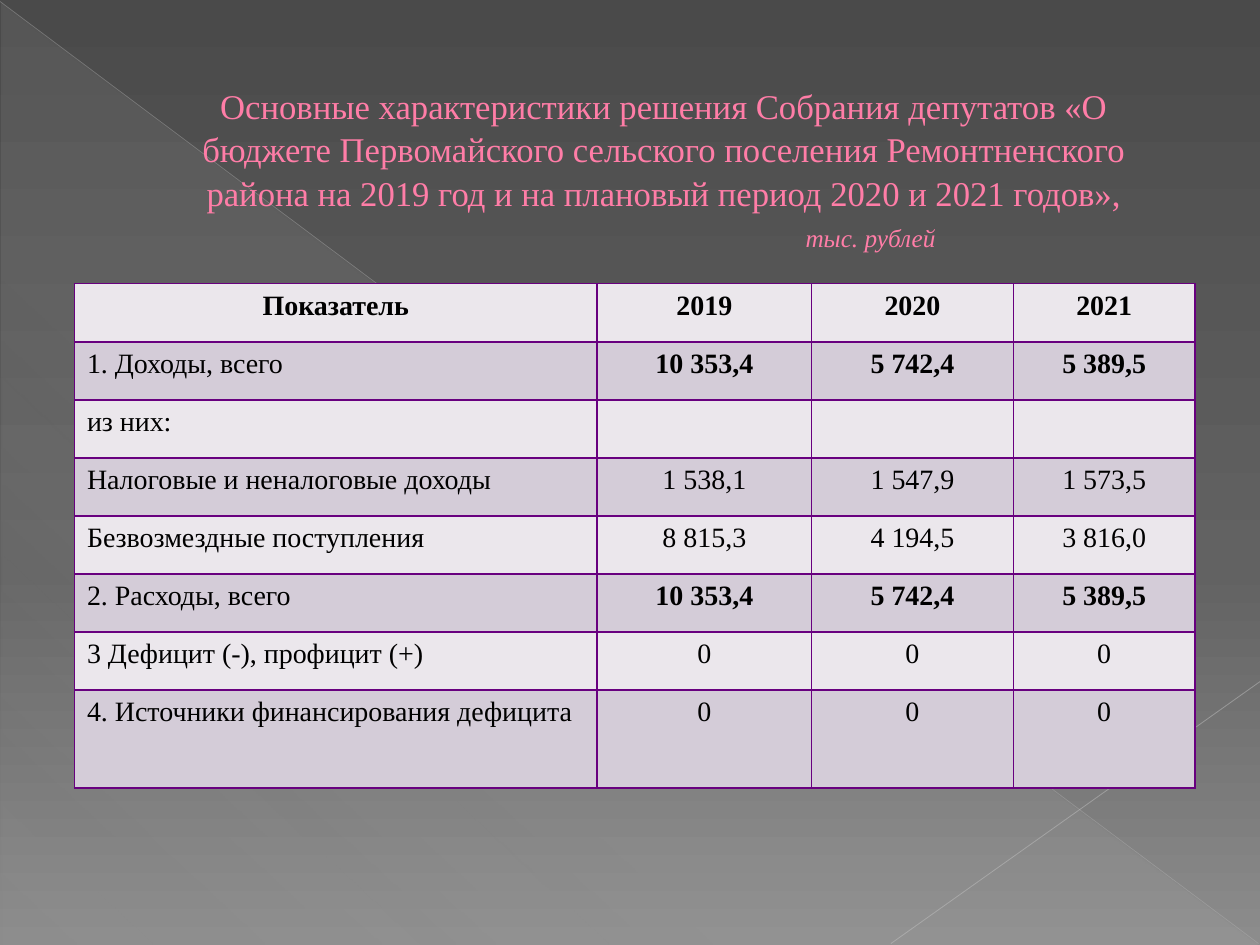
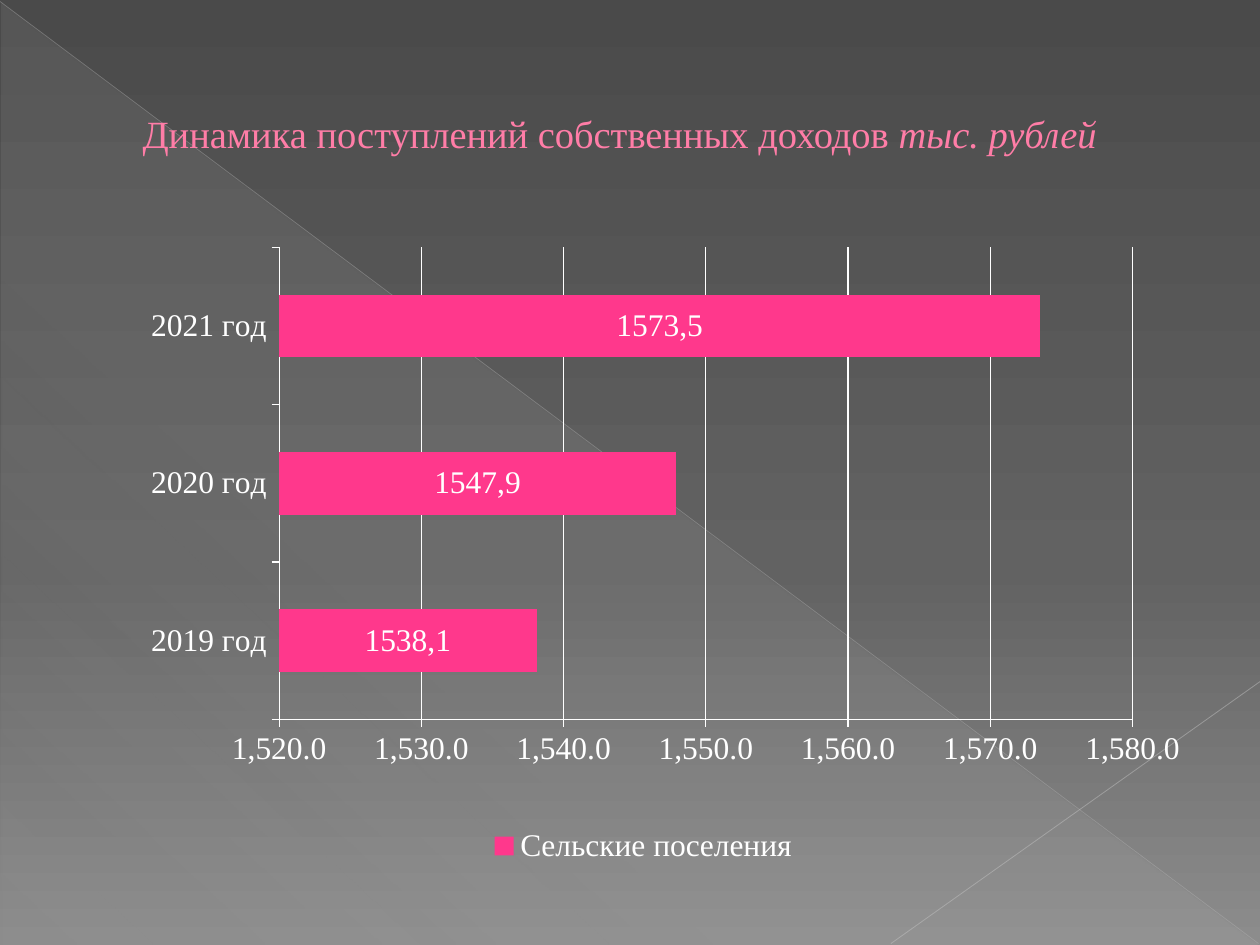
from dataclasses import dataclass

from lxml.etree import SubElement
from pptx import Presentation
from pptx.chart.data import CategoryChartData
from pptx.dml.color import RGBColor
from pptx.enum.chart import XL_CHART_TYPE, XL_LEGEND_POSITION, XL_TICK_MARK
from pptx.enum.shapes import MSO_CONNECTOR, MSO_SHAPE
from pptx.enum.text import MSO_ANCHOR, MSO_AUTO_SIZE, PP_ALIGN
from pptx.oxml.ns import qn
from pptx.util import Cm, Pt


@dataclass(frozen=True)
class Theme:
    font: str = "Times New Roman"
    chart_font: str = "TeX Gyre Adventor"
    title: str = "FF7DA7"
    title_outline: str = "B12761"
    light: str = "FFFFFF"
    ink: str = "000000"
    bar: str = "FF388C"
    border: str = "68007F"
    veil: str = "D2D2D2"
    diagonal: str = "BFBFBF"
    corner: str = "C6C6C6"
    bands: tuple = ("EBE7EC", "D4CCD8")
    backdrop: tuple = ((0, "4A4A4A", 100), (60, "626262", 100), (100, "8C8C8C", 100))
    budget_title_size: float = 19.8
    unit_size: float = 14.4
    dynamics_title_size: float = 22
    table_size: float = 16
    chart_size: float = 18


THEME = Theme()

BUDGET_ROWS = [
    ("Показатель", "2019", "2020", "2021"),
    ("1. Доходы, всего", "10 353,4", "5 742,4", "5 389,5"),
    ("из них:", "", "", ""),
    ("Налоговые и неналоговые доходы", "1 538,1", "1 547,9", "1 573,5"),
    ("Безвозмездные поступления", "8 815,3", "4 194,5", "3 816,0"),
    ("2. Расходы, всего", "10 353,4", "5 742,4", "5 389,5"),
    ("3 Дефицит (-), профицит (+)", "0", "0", "0"),
    ("4. Источники финансирования дефицита", "0", "0", "0"),
]
TOTAL_ROWS = (1, 5)
OWN_INCOME = {"2019 год": 1538.1, "2020 год": 1547.9, "2021 год": 1573.5}


def rgb(color):
    return RGBColor.from_string(color)


def style_font(font, size, color, bold=None, italic=None):
    font.name = THEME.font
    font.size = Pt(size)
    font.color.rgb = rgb(color)
    font.bold = bold
    font.italic = italic


def add_color(parent, color, opacity=100):
    tint = SubElement(parent, qn("a:srgbClr"), val=color)
    if opacity < 100:
        SubElement(tint, qn("a:alpha"), val=str(opacity * 1000))


def add_solid(parent, color, opacity=100):
    add_color(SubElement(parent, qn("a:solidFill")), color, opacity)


def paint_gradient(fill, owner, stops, angle):
    fill.gradient()
    gradient = next(owner.iter(qn("a:gradFill")))
    for child in list(gradient):
        gradient.remove(child)
    stop_list = SubElement(gradient, qn("a:gsLst"))
    for position, color, opacity in stops:
        stop = SubElement(stop_list, qn("a:gs"), pos=str(position * 1000))
        add_color(stop, color, opacity)
    SubElement(gradient, qn("a:lin"), ang=str(angle * 60000), scaled="0")


def add_ray(slide, start, end, color, width, opacity):
    ray = slide.shapes.add_connector(
        MSO_CONNECTOR.STRAIGHT, *(Cm(value) for value in start + end))
    ray.line.width = Pt(width)
    ray.line.color.rgb = rgb(color)
    tint = next(ray._element.spPr.iter(qn("a:srgbClr")))
    SubElement(tint, qn("a:alpha"), val=str(opacity * 1000))
    SubElement(ray._element.spPr, qn("a:effectLst"))


def add_backdrop(slide):
    veil = slide.shapes.add_shape(
        MSO_SHAPE.RIGHT_TRIANGLE, Cm(0.03), Cm(0.05), Cm(25.35), Cm(19))
    veil.shadow.inherit = False
    veil.line.fill.background()
    stops = [(0, THEME.veil, 10), (70, THEME.veil, 8), (100, THEME.veil, 1)]
    paint_gradient(veil.fill, veil._element, stops, 133)
    add_ray(slide, (0, 0.03), (25.37, 19.02), THEME.diagonal, 0.39, 35)
    add_ray(slide, (25.4, 13.74), (17.96, 19.02), THEME.corner, 0.47, 45)


def add_titled_slide(presentation, left, top, width, height):
    slide = presentation.slides.add_slide(presentation.slide_layouts[5])
    add_backdrop(slide)
    title = slide.shapes.title
    slide.shapes._spTree.append(title._element)
    title.left, title.top = Cm(left), Cm(top)
    title.width, title.height = Cm(width), Cm(height)
    frame = title.text_frame
    frame.word_wrap = True
    frame.auto_size = MSO_AUTO_SIZE.NONE
    frame.vertical_anchor = MSO_ANCHOR.MIDDLE
    return slide, frame


def format_paragraph(paragraph, alignment, indent):
    paragraph.alignment = alignment
    properties = paragraph._p.get_or_add_pPr()
    properties.set("marL", str(Cm(indent)))
    properties.set("indent", "0")


def add_title_run(paragraph, text, size, italic=False):
    run = paragraph.add_run()
    run.text = text
    style_font(run.font, size, THEME.title, italic=italic)
    properties = run._r.get_or_add_rPr()
    outline = SubElement(properties, qn("a:ln"), w=str(Pt(0.5)))
    add_solid(outline, THEME.title_outline)
    properties.insert(0, outline)


def set_borders(cell):
    properties = cell._tc.get_or_add_tcPr()
    for side in ("lnL", "lnR", "lnT", "lnB"):
        add_solid(SubElement(properties, qn(f"a:{side}"), w=str(Pt(1))), THEME.border)


def fill_cell(cell, text, row, column):
    set_borders(cell)
    cell.fill.solid()
    cell.fill.fore_color.rgb = rgb(THEME.bands[row % 2])
    paragraph = cell.text_frame.paragraphs[0]
    paragraph.alignment = PP_ALIGN.CENTER if row == 0 or column else PP_ALIGN.LEFT
    bold = row == 0 or (row in TOTAL_ROWS and column > 0)
    if text:
        run = paragraph.add_run()
        run.text = text
        style_font(run.font, THEME.table_size, THEME.ink, bold)


def add_budget_table(slide):
    widths = (10.54, 4.32, 4.07, 3.66)
    heights = [1.17] * 7 + [1.98]
    table = slide.shapes.add_table(
        len(heights), len(widths), Cm(1.5), Cm(5.72), Cm(sum(widths)), Cm(sum(heights))).table
    for column, width in zip(table.columns, widths):
        column.width = Cm(width)
    for row, height in zip(table.rows, heights):
        row.height = Cm(height)
    for row, texts in enumerate(BUDGET_ROWS):
        for column, text in enumerate(texts):
            fill_cell(table.cell(row, column), text, row, column)


def fill_layout(layout, x, y, w, h, inner=False):
    manual = SubElement(layout, qn("c:manualLayout"))
    settings = [("layoutTarget", "inner")] if inner else []
    settings += [("xMode", "edge"), ("yMode", "edge"), ("x", x), ("y", y), ("w", w), ("h", h)]
    for tag, value in settings:
        SubElement(manual, qn(f"c:{tag}"), val=str(value))


def place_plot(chart):
    plot_area = next(chart._chartSpace.iter(qn("c:plotArea")))
    for layout in plot_area.findall(qn("c:layout")):
        plot_area.remove(layout)
    layout = SubElement(plot_area, qn("c:layout"))
    plot_area.insert(0, layout)
    fill_layout(layout, 0.19, 0.04, 0.75, 0.71, inner=True)


def add_legend(chart):
    chart.has_legend = True
    legend = chart.legend
    legend.position = XL_LEGEND_POSITION.RIGHT
    legend.include_in_layout = False
    style_font(legend.font, THEME.chart_size, THEME.light)
    element = legend._element
    for layout in element.findall(qn("c:layout")):
        element.remove(layout)
    layout = SubElement(element, qn("c:layout"))
    element.find(qn("c:legendPos")).addnext(layout)
    fill_layout(layout, 0.37, 0.9, 0.28, 0.08)


def style_axis(axis):
    axis.major_tick_mark = XL_TICK_MARK.OUTSIDE
    axis.minor_tick_mark = XL_TICK_MARK.NONE
    axis.format.line.color.rgb = rgb(THEME.light)
    axis.format.line.width = Pt(0.75)
    style_font(axis.tick_labels.font, THEME.chart_size, THEME.light)


def style_value_axis(axis):
    style_axis(axis)
    axis.minimum_scale, axis.maximum_scale, axis.major_unit = 1520, 1580, 10
    axis.has_major_gridlines = True
    axis.major_gridlines.format.line.color.rgb = rgb(THEME.light)
    axis.major_gridlines.format.line.width = Pt(0.75)
    axis.tick_labels.number_format = "#,##0.0"
    axis.tick_labels.number_format_is_linked = False


def style_bars(plot):
    plot.gap_width = 150
    plot.overlap = 100
    plot.vary_by_categories = False
    bars = plot.series[0]
    bars.format.fill.solid()
    bars.format.fill.fore_color.rgb = rgb(THEME.bar)
    labels = bars.data_labels
    labels.show_value = True
    labels.number_format = "#,##0.0"
    labels.number_format_is_linked = False
    style_font(labels.font, THEME.chart_size, THEME.light)
    for index, income in enumerate(OWN_INCOME.values()):
        label = bars.points[index].data_label.text_frame
        run = label.paragraphs[0].add_run()
        run.text = str(income).replace(".", ",")
        style_font(run.font, THEME.chart_size, THEME.light)


def add_income_chart(slide):
    income = CategoryChartData(number_format="#,##0.0")
    income.categories = list(OWN_INCOME)
    income.add_series("Сельские поселения", list(OWN_INCOME.values()))
    chart = slide.shapes.add_chart(
        XL_CHART_TYPE.BAR_STACKED, Cm(1.27), Cm(4.45), Cm(22.94), Cm(13.41), income).chart
    chart.has_title = False
    style_font(chart.font, THEME.chart_size, THEME.light)
    chart.font.name = THEME.chart_font
    style_axis(chart.category_axis)
    style_value_axis(chart.value_axis)
    style_bars(chart.plots[0])
    place_plot(chart)
    add_legend(chart)


def build_budget_slide(presentation):
    slide, title = add_titled_slide(presentation, 1.5, 1.19, 22.4, 4.37)
    heading = title.paragraphs[0]
    format_paragraph(heading, PP_ALIGN.CENTER, 1.35)
    heading.line_spacing = 1.05
    add_title_run(
        heading,
        "Основные характеристики решения Собрания депутатов «О бюджете Первомайского "
        "сельского поселения Ремонтненского района на 2019 год и на плановый период "
        "2020 и 2021 годов»,",
        THEME.budget_title_size)
    unit = title.add_paragraph()
    format_paragraph(unit, PP_ALIGN.CENTER, 9.7)
    unit.space_before = Pt(5)
    add_title_run(unit, "тыс. рублей", THEME.unit_size, italic=True)
    add_budget_table(slide)


def build_dynamics_slide(presentation):
    slide, title = add_titled_slide(presentation, 1.27, 0.74, 22.86, 3.89)
    heading = title.paragraphs[0]
    format_paragraph(heading, PP_ALIGN.LEFT, 1.35)
    add_title_run(heading, "Динамика поступлений собственных доходов ", THEME.dynamics_title_size)
    add_title_run(heading, "тыс. рублей", THEME.dynamics_title_size, italic=True)
    add_income_chart(slide)


def main():
    presentation = Presentation()
    presentation.slide_width, presentation.slide_height = Cm(25.4), Cm(19.05)
    master = presentation.slide_master
    paint_gradient(master.background.fill, master.element, THEME.backdrop, 90)
    build_budget_slide(presentation)
    build_dynamics_slide(presentation)
    presentation.save("out.pptx")


if __name__ == "__main__":
    main()
